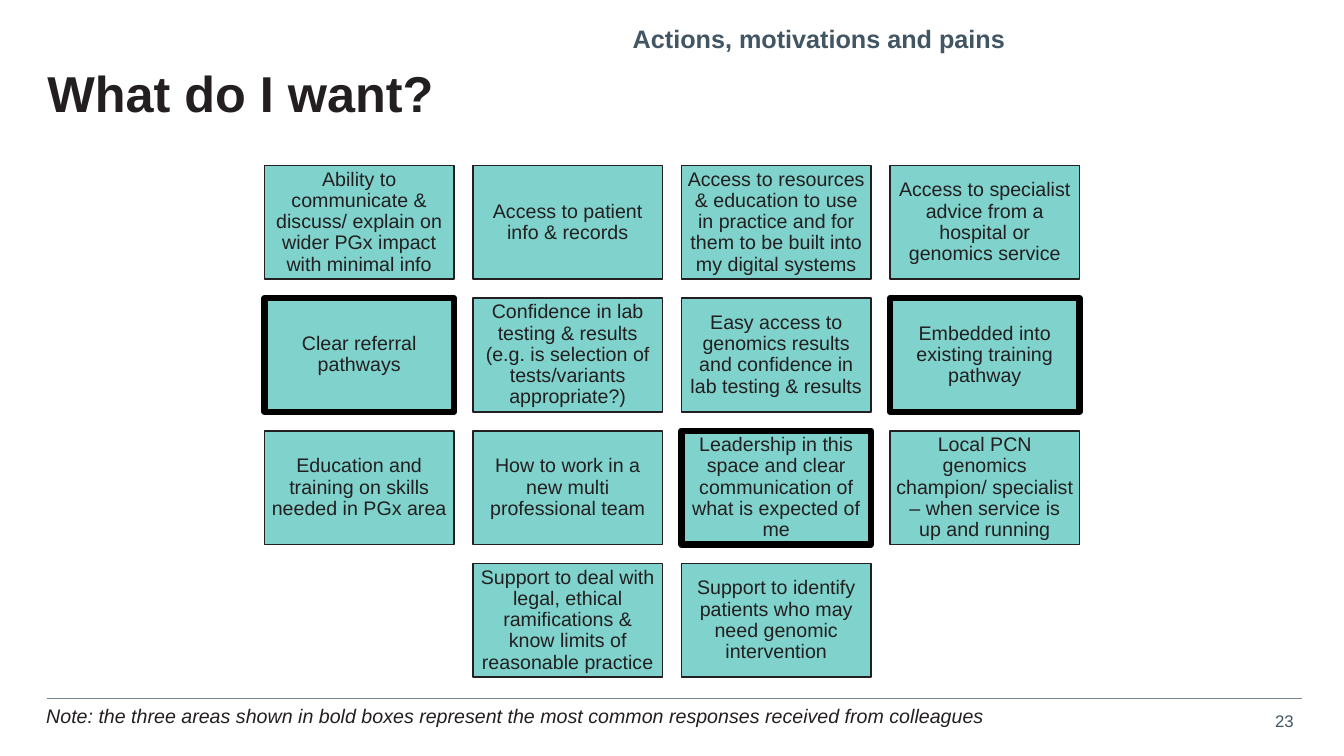
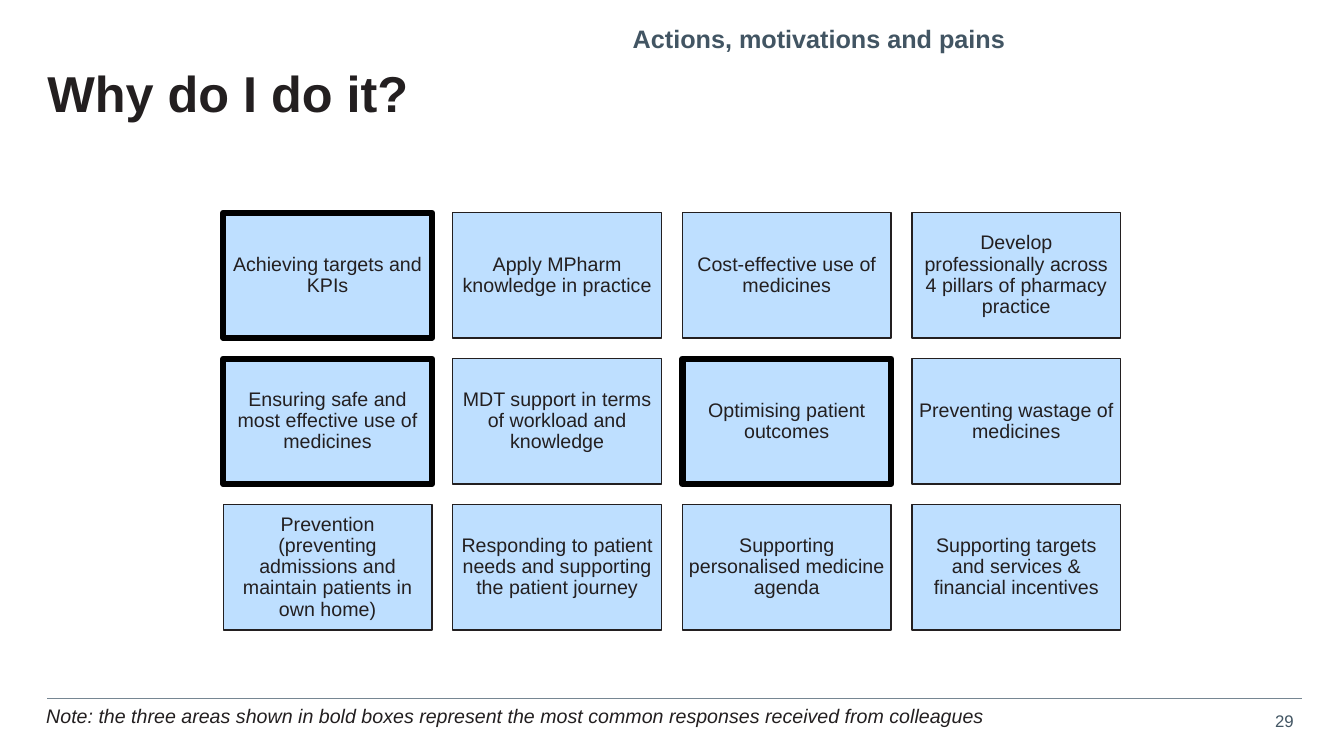
"""Build two slides of response cards on actions, motivations and pains."""
import dataclasses

import pptx
import pptx.dml.color
import pptx.enum.shapes
import pptx.enum.text
import pptx.oxml.ns
import pptx.util
from lxml import etree

Inches, Pt = pptx.util.Inches, pptx.util.Pt
RGB = pptx.dml.color.RGBColor.from_string
ALIGN = pptx.enum.text.PP_ALIGN
ANCHOR = pptx.enum.text.MSO_ANCHOR


@dataclasses.dataclass(frozen=True)
class Theme:
    """Colours, type sizes and line widths shared by the slides."""
    font: str = "Arial"
    ink: str = "231F20"
    slate: str = "425563"
    rule: str = "768692"
    black: str = "000000"
    teal: str = "80D2CC"
    sky: str = "BEDFFF"
    title: int = 36
    strap: int = 18
    text: int = 14
    number: int = 12
    thin: float = 1
    bold: float = 4.5


THEME = Theme()
SLIDE_W, SLIDE_H = 13.33, 7.5
COLS, GAP_SHARE, HEIGHT_SHARE = 4, 0.1, 0.6
GRID_MIDDLE = 4.18
STRAP = "Actions, motivations and pains"
NOTE = ("Note: the three areas shown in bold boxes represent "
        "the most common responses received from colleagues")

SLIDES = [
    {
        "title": "What do I want?", "number": "23", "fill": THEME.teal, "card_w": 1.88,
        "cards": [
            "Ability to communicate & discuss/ explain on wider PGx impact with minimal info",
            "Access to patient info & records",
            "Access to resources & education to use in practice and for them "
            "to be built into my digital systems",
            "Access to specialist advice from a hospital or genomics service",
            "Clear referral pathways",
            "Confidence in lab testing & results (e.g. is selection of "
            "tests/variants appropriate?)",
            "Easy access to genomics results and confidence in lab testing & results",
            "Embedded into existing training pathway",
            "Education and training on skills needed in PGx area",
            "How to work in a new multi professional team",
            "Leadership in this space and clear communication of what is expected of me",
            "Local PCN genomics champion/ specialist – when service is up and running",
            "Support to deal with legal, ethical ramifications & know limits "
            "of reasonable practice",
            "Support to identify patients who may need genomic intervention",
        ],
        "common": {"Clear referral pathways", "Embedded into existing training pathway",
                   "Leadership in this space and clear communication of what is expected of me"},
    },
    {
        "title": "Why do I do it?", "number": "29", "fill": THEME.sky, "card_w": 2.07,
        "cards": [
            "Achieving targets and KPIs",
            "Apply MPharm knowledge in practice",
            "Cost-effective use of medicines",
            "Develop professionally across 4 pillars of pharmacy practice",
            "Ensuring safe and most effective use of medicines",
            "MDT support in terms of workload and knowledge",
            "Optimising patient outcomes",
            "Preventing wastage of medicines",
            "Prevention (preventing admissions and maintain patients in own home)",
            "Responding to patient needs and supporting the patient journey",
            "Supporting personalised medicine agenda",
            "Supporting targets and services & financial incentives",
        ],
        "common": {"Achieving targets and KPIs", "Optimising patient outcomes",
                   "Ensuring safe and most effective use of medicines"},
    },
]


def place(sp, x, y, w, h):
    """Move and size a shape in inches."""
    sp.left, sp.top, sp.width, sp.height = (Inches(v) for v in (x, y, w, h))


def write(sp, text, size, color, align=ALIGN.LEFT, anchor=ANCHOR.TOP, inset=None,
          spacing=None, bold=False, italic=False):
    """Fill a shape with one formatted paragraph."""
    tf = sp.text_frame
    tf.text = text
    tf.word_wrap = True
    tf.auto_size = pptx.enum.text.MSO_AUTO_SIZE.NONE
    tf.vertical_anchor = anchor
    if inset is not None:
        tf.margin_left = tf.margin_right = tf.margin_top = tf.margin_bottom = Inches(inset)
    p = tf.paragraphs[0]
    p.alignment = align
    p.space_before = Pt(0)
    if spacing is not None:
        p.line_spacing = spacing
    font = p.runs[0].font
    font.name, font.size, font.bold, font.italic = THEME.font, Pt(size), bold, italic
    font.color.rgb = RGB(color)
    return p


def add_frame(s, title, number):
    """Add the title, strapline, footer rule, note and slide number."""
    place(s.shapes.title, 0.47, 0.68, 12.47, 0.68)
    write(s.shapes.title, title, THEME.title, THEME.ink, inset=0, spacing=0.9, bold=True)

    strap = s.placeholders[1]
    place(strap, 4.78, 0.23, 5.19, 0.63)
    p = write(strap, STRAP, THEME.strap, THEME.slate, ALIGN.RIGHT,
              inset=0, spacing=Pt(22), bold=True)
    props = p._p.get_or_add_pPr()
    props.set("marL", "0")
    props.set("indent", "0")
    etree.SubElement(props, pptx.oxml.ns.qn("a:buNone"))

    rule = s.shapes.add_connector(pptx.enum.shapes.MSO_CONNECTOR.STRAIGHT, Inches(0.47),
                                  Inches(6.93), Inches(12.91), Inches(6.93))
    rule.line.color.rgb = RGB(THEME.rule)
    rule.line.width = Pt(0.5)
    etree.SubElement(rule._element.spPr, pptx.oxml.ns.qn("a:effectLst"))

    note = s.shapes.add_textbox(Inches(0.36), Inches(6.93), Inches(12), Inches(0.34))
    write(note, NOTE, THEME.text, THEME.ink, italic=True)
    page = s.shapes.add_textbox(Inches(12.43), Inches(7), Inches(0.5), Inches(0.3))
    write(page, number, THEME.number, THEME.slate, ALIGN.RIGHT)


def add_cards(s, cards, common, fill, card_w):
    """Lay the cards out in centred rows, with heavy borders on the common ones."""
    card_h, gap = card_w * HEIGHT_SHARE, card_w * GAP_SHARE
    rows = [cards[i:i + COLS] for i in range(0, len(cards), COLS)]
    top = GRID_MIDDLE - (len(rows) * (card_h + gap) - gap) / 2
    for i, row in enumerate(rows):
        left = (SLIDE_W - len(row) * (card_w + gap) + gap) / 2
        for j, text in enumerate(row):
            sp = s.shapes.add_shape(
                pptx.enum.shapes.MSO_SHAPE.RECTANGLE,
                Inches(left + j * (card_w + gap)), Inches(top + i * (card_h + gap)),
                Inches(card_w), Inches(card_h))
            sp.shadow.inherit = False
            sp.fill.solid()
            sp.fill.fore_color.rgb = RGB(fill)
            heavy = text in common
            sp.line.color.rgb = RGB(THEME.black if heavy else THEME.ink)
            sp.line.width = Pt(THEME.bold if heavy else THEME.thin)
            write(sp, text, THEME.text, THEME.ink, ALIGN.CENTER, ANCHOR.MIDDLE,
                  inset=0.06, spacing=0.9)


def main():
    """Build and save the presentation."""
    prs = pptx.Presentation()
    prs.slide_width, prs.slide_height = Inches(SLIDE_W), Inches(SLIDE_H)
    for data in SLIDES:
        s = prs.slides.add_slide(prs.slide_layouts[1])
        add_frame(s, data["title"], data["number"])
        add_cards(s, data["cards"], data["common"], data["fill"], data["card_w"])
    prs.save("out.pptx")


if __name__ == "__main__":
    main()
